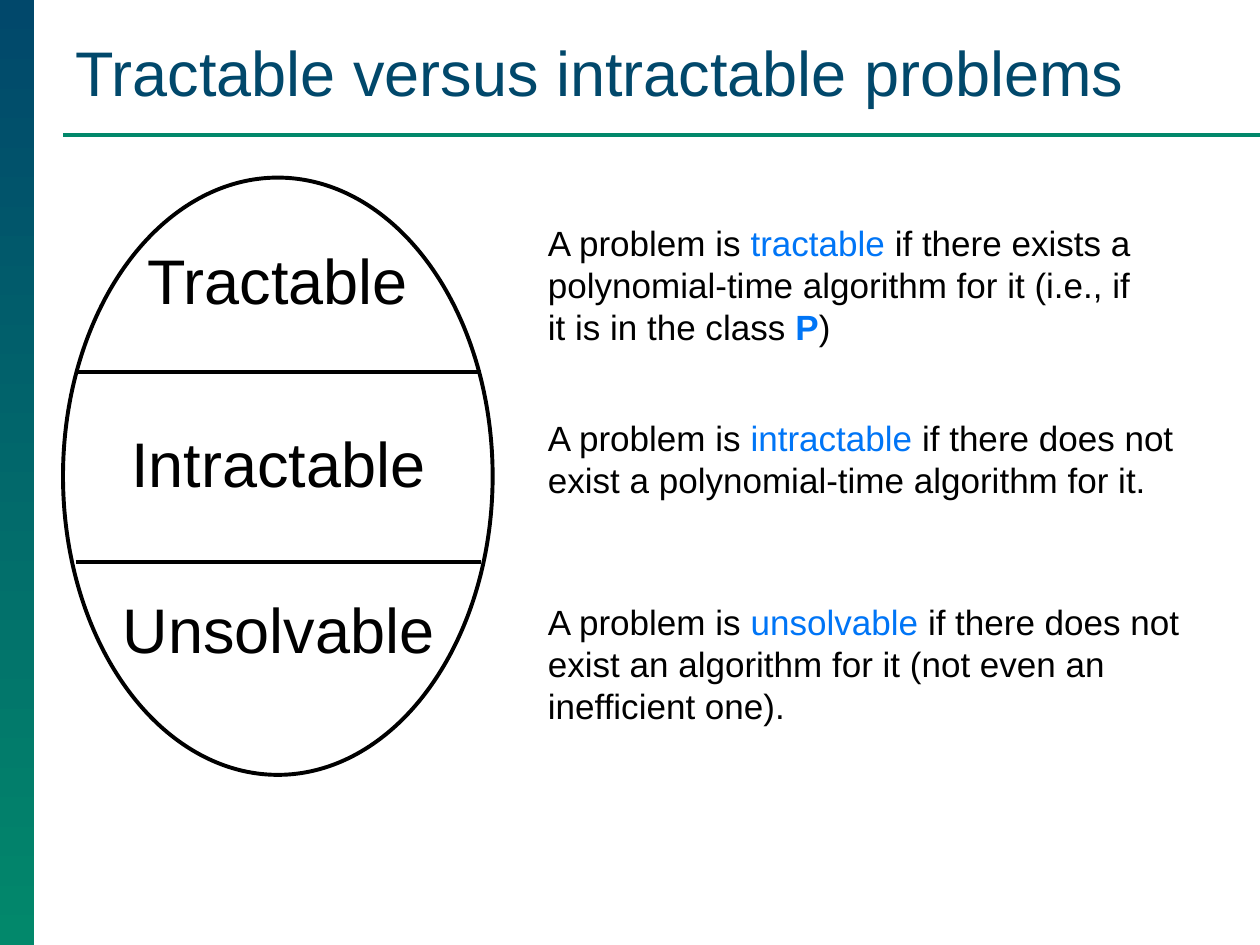
from pptx import Presentation
from pptx.dml.color import RGBColor
from pptx.enum.shapes import MSO_CONNECTOR, MSO_SHAPE
from pptx.enum.text import MSO_ANCHOR, PP_ALIGN
from pptx.oxml.ns import qn
from pptx.util import Inches, Pt
from lxml import etree

RECT, OVAL, STRAIGHT = MSO_SHAPE.RECTANGLE, MSO_SHAPE.OVAL, MSO_CONNECTOR.STRAIGHT
LEFT, CENTER = PP_ALIGN.LEFT, PP_ALIGN.CENTER
TOP, BOTTOM = MSO_ANCHOR.TOP, MSO_ANCHOR.BOTTOM

# Content: runs are (text, style)
TITLE = "Tractable versus intractable problems"
CLASSES = [
    {"name": "Tractable", "name_box": (1.06, 1.87, 2.29, 0.71),
     "text_box": (4.25, 1.71, 5.01, 1.11),
     "runs": [("A problem is ", ""), ("tractable", "term"),
              (" if there exists a polynomial-time algorithm for it "
               "(i.e., if it is in the class ", ""),
              ("P", "bold term"), (")", "")]},
    {"name": "Intractable", "name_box": (0.93, 3.32, 2.56, 0.71),
     "text_box": (4.25, 3.26, 5.35, 0.77),
     "runs": [("A problem is ", ""), ("intractable", "term"),
              (" if there does not exist a polynomial-time algorithm for it.", "")]},
    {"name": "Unsolvable", "name_box": (0.86, 4.64, 2.7, 0.72),
     "text_box": (4.25, 4.72, 5.35, 1.11),
     "runs": [("A problem is ", ""), ("unsolvable ", "term"),
              ("if there does not exist an algorithm for it "
               "(not even an inefficient one).", "")]},
]
DIVIDERS = [2.95, 4.46]

THEME = {
    "font": "Arial", "heading": Pt(36), "body": Pt(20), "line": Pt(2.25),
    "navy": RGBColor(0x01, 0x48, 0x6B), "green": RGBColor(0x02, 0x88, 0x6B),
    "black": RGBColor(0, 0, 0), "term": RGBColor(0x00, 0x75, 0xF6),
}


def box(*lengths):
    return [Inches(v) for v in lengths]


def set_font(p, size, color):
    p.font.name, p.font.size = THEME["font"], size
    p.font.color.rgb = color


def add_line(x1, x2, y, color):
    line = slide.shapes.add_connector(STRAIGHT, *box(x1, y, x2, y))
    line.line.color.rgb, line.line.width = color, THEME["line"]
    etree.SubElement(line._element.spPr, qn("a:effectLst"))


def add_text(area, runs, size, align=LEFT, wrap=True):
    tf = slide.shapes.add_textbox(*box(*area)).text_frame
    tf.word_wrap, tf.vertical_anchor = wrap, TOP
    p = tf.paragraphs[0]
    p.alignment = align
    set_font(p, size, THEME["black"])
    for text, style in runs:
        r = p.add_run()
        r.text = text
        if "term" in style:
            r.font.color.rgb = THEME["term"]
        if "bold" in style:
            r.font.bold = True


prs = Presentation()
prs.slide_width, prs.slide_height = box(10, 7.5)
slide = prs.slides.add_slide(prs.slide_layouts[5])

# Side band and title rule
band = slide.shapes.add_shape(RECT, *box(0, 0, 0.27, 7.5))
band.shadow.inherit = False
band.line.fill.background()
band.fill.gradient()
band.fill.gradient_angle = 270
for stop, name in zip(band.fill.gradient_stops, ("navy", "green")):
    stop.color.rgb = THEME[name]
add_line(0.5, 10, 1.07, THEME["green"])

# Title
title = slide.shapes.title
title.left, title.top, title.width, title.height = box(0.5, 0.21, 9.28, 0.71)
tf = title.text_frame
tf.text = TITLE
tf.word_wrap, tf.vertical_anchor = True, BOTTOM
tf.paragraphs[0].alignment = LEFT
set_font(tf.paragraphs[0], THEME["heading"], THEME["navy"])

# Oval divided into three classes
oval = slide.shapes.add_shape(OVAL, *box(0.5, 1.41, 3.41, 4.74))
oval.shadow.inherit = False
oval.fill.background()
oval.line.color.rgb, oval.line.width = THEME["black"], THEME["line"]
for y in DIVIDERS:
    add_line(0.6, 3.82, y, THEME["black"])

# Class names and definitions
for item in CLASSES:
    add_text(item["name_box"], [(item["name"], "")], THEME["heading"], CENTER, wrap=False)
    add_text(item["text_box"], item["runs"], THEME["body"])

prs.save("out.pptx")
